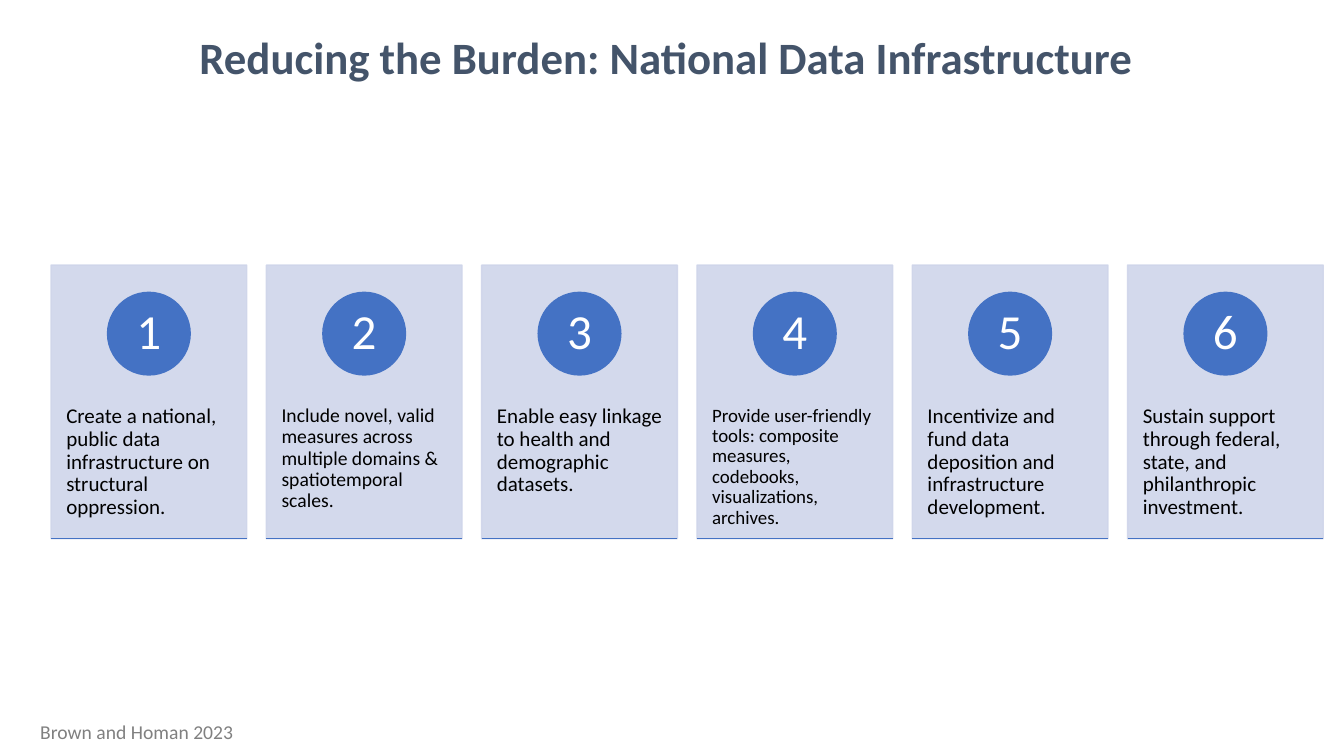
from dataclasses import dataclass

from lxml import etree
from pptx import Presentation
from pptx import util as u
from pptx.dml.color import RGBColor
from pptx.enum import shapes, text
from pptx.oxml import ns


@dataclass(frozen=True)
class Theme:
    font: str = "Calibri"
    title: str = "44546A"
    source: str = "808080"
    card: str = "CFD5EA"
    accent: str = "4472C4"
    ink: str = "000000"
    white: str = "FFFFFF"
    title_size: float = 32
    source_size: float = 14
    number_size: float = 35
    step_size: float = 15
    step_size_long: float = 14
    step_size_longest: float = 13.5


class SlideBuilder:
    def __init__(self, deck, theme):
        self.theme = theme
        self.width, self.height = deck.slide_width, deck.slide_height
        self.slide = deck.slides.add_slide(deck.slide_layouts[5])

    def across(self, percent):
        return round(self.width * percent / 100)

    def down(self, percent):
        return round(self.height * percent / 100)

    def area(self, left, top, width, height):
        return self.across(left), self.down(top), self.across(width), self.down(height)

    def set_words(self, box, words, size, color, align=text.PP_ALIGN.LEFT,
                  anchor=text.MSO_ANCHOR.TOP, bold=False, spacing=1.0):
        frame = box.text_frame
        frame.word_wrap = True
        frame.auto_size = text.MSO_AUTO_SIZE.NONE
        frame.vertical_anchor = anchor
        frame.text = words
        para = frame.paragraphs[0]
        para.alignment = align
        para.line_spacing = spacing
        para.space_before = u.Pt(0)
        para.font.name = self.theme.font
        para.font.size = u.Pt(size)
        para.font.bold = bold
        para.font.color.rgb = RGBColor.from_string(color)
        return frame

    def shape(self, kind, area, color, opacity=100):
        box = self.slide.shapes.add_shape(kind, *area)
        box.shadow.inherit = False
        box.fill.solid()
        box.line.fill.solid()
        box.line.width = u.Pt(1)
        for fill in (box.fill, box.line.fill):
            fill.fore_color.rgb = RGBColor.from_string(color)
        if opacity < 100:
            for tone in box._element.spPr.iter(ns.qn("a:srgbClr")):
                etree.SubElement(tone, ns.qn("a:alpha"), val=str(opacity * 1000))
        return box

    def title(self, words):
        box = self.slide.shapes.title
        box.left, box.top, box.width, box.height = self.area(2.25, 3.2, 94.65, 8.53)
        self.set_words(box, words, self.theme.title_size, self.theme.title,
                       text.PP_ALIGN.CENTER, text.MSO_ANCHOR.MIDDLE, bold=True)

    def source(self, words):
        box = self.slide.shapes.add_textbox(*self.area(2.25, 94.53, 92.48, 4.53))
        self.set_words(box, words, self.theme.source_size, self.theme.source)

    def card(self, left, top, width, height, words, size):
        box = self.shape(shapes.MSO_SHAPE.RECTANGLE,
                         self.area(left, top, width, height), self.theme.card, 90)
        frame = self.set_words(box, words, size, self.theme.ink, spacing=0.9)
        frame.margin_left = frame.margin_right = self.across(1.13)
        frame.margin_top, frame.margin_bottom = self.down(18.6), 0

    def badge(self, center, top, diameter, number):
        size = self.across(diameter)
        area = self.across(center) - size // 2, self.down(top), size, size
        box = self.shape(shapes.MSO_SHAPE.OVAL, area, self.theme.accent)
        frame = self.set_words(box, str(number), self.theme.number_size, self.theme.white,
                               text.PP_ALIGN.CENTER, text.MSO_ANCHOR.MIDDLE, spacing=0.9)
        frame.margin_left = frame.margin_right = 0
        frame.margin_top = frame.margin_bottom = 0

    def rule(self, left, level, width):
        line = self.slide.shapes.add_connector(
            shapes.MSO_CONNECTOR.STRAIGHT, self.across(left), self.down(level),
            self.across(left + width), self.down(level))
        line.line.color.rgb = RGBColor.from_string(self.theme.accent)
        line.line.width = u.Pt(1)
        etree.SubElement(line._element.spPr, ns.qn("a:effectLst"))

    def steps(self, steps):
        first, pitch, width, top, height = 3.8, 16.02, 14.56, 35.07, 36.2
        for index, (words, size) in enumerate(steps):
            left = first + index * pitch
            self.card(left, top, width, height, words, size)
            self.badge(left + width / 2, 38.67, 6.15, index + 1)
            self.rule(left, top + height, width)


def main():
    deck = Presentation()
    deck.slide_width, deck.slide_height = u.Inches(13.33), u.Inches(7.5)
    theme = Theme()
    page = SlideBuilder(deck, theme)
    page.title("Reducing the Burden: National Data Infrastructure")
    page.source("Brown and Homan 2023")
    page.steps([
        ("Create a national, public data infrastructure on structural oppression.",
         theme.step_size),
        ("Include novel, valid measures across multiple domains & spatiotemporal scales.",
         theme.step_size_long),
        ("Enable easy linkage to health and demographic datasets.", theme.step_size),
        ("Provide user-friendly tools: composite measures, codebooks, visualizations, "
         "archives.", theme.step_size_longest),
        ("Incentivize and fund data deposition and infrastructure development.",
         theme.step_size),
        ("Sustain support through federal, state, and philanthropic investment.",
         theme.step_size),
    ])
    deck.save("out.pptx")


if __name__ == "__main__":
    main()
